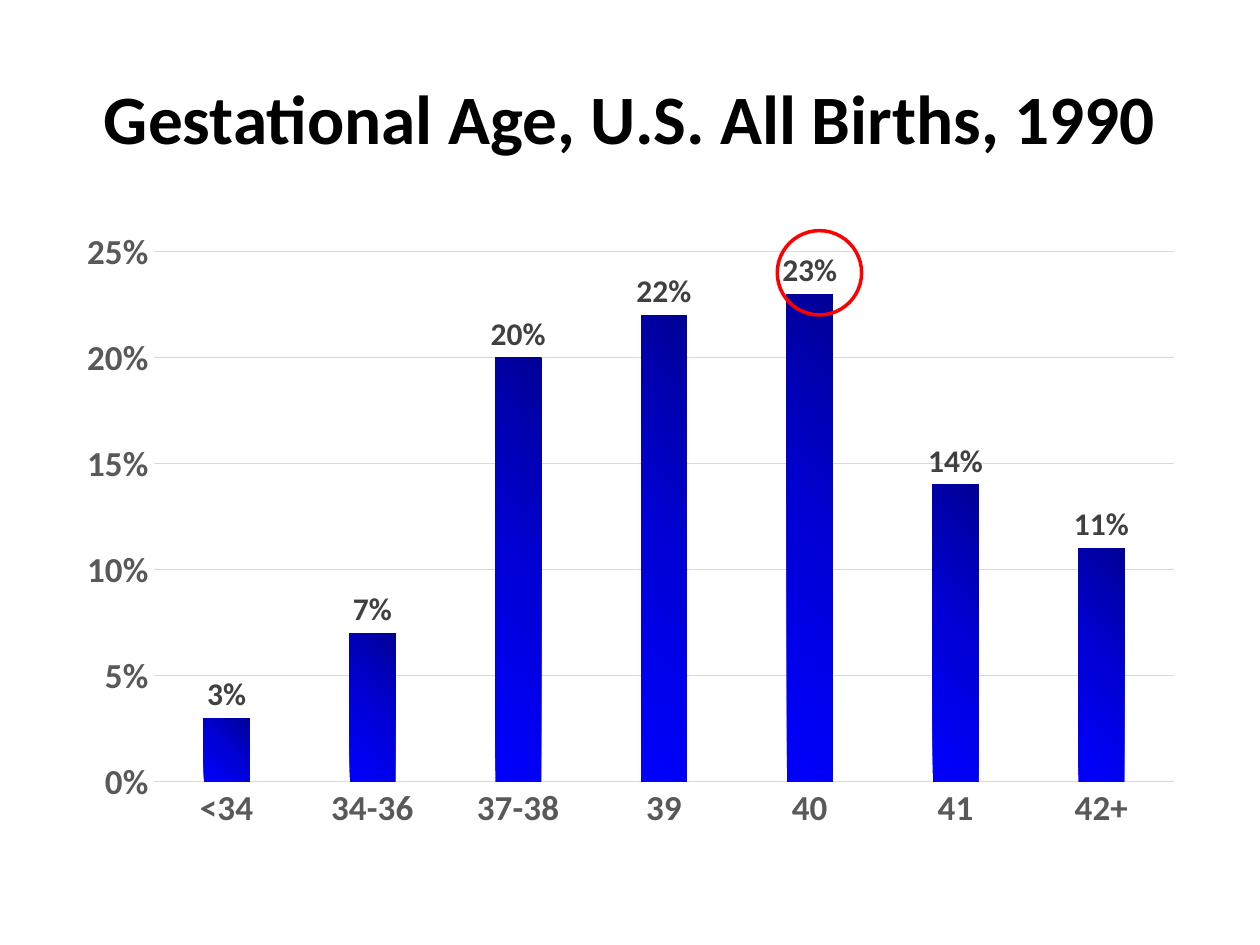
from pptx import Presentation
from pptx.chart.data import CategoryChartData
from pptx.dml.color import RGBColor
from pptx.enum.chart import XL_CHART_TYPE, XL_LABEL_POSITION, XL_TICK_MARK
from pptx.enum.shapes import MSO_SHAPE
from pptx.enum.text import MSO_ANCHOR, PP_ALIGN
from pptx.oxml import parse_xml
from pptx.oxml.ns import nsdecls, qn
from pptx.util import Cm, Pt

COLORS = {
    "title": "000000",
    "axis": "595959",
    "label": "404040",
    "grid": "D9D9D9",
    "circle": "FF0000",
}
BAR_GRADIENT = {0: "000097", 50: "0000D7", 100: "0000FF"}
BIRTH_SHARES = {
    "<34": 0.03, "34-36": 0.07, "37-38": 0.2, "39": 0.22,
    "40": 0.23, "41": 0.14, "42+": 0.11,
}


def format_font(font, size, color, bold=True):
    font.name = "Calibri"
    font.size = Pt(size)
    font.bold = bold
    font.color.rgb = RGBColor.from_string(COLORS[color])


presentation = Presentation()
presentation.slide_width = Cm(25.4)
presentation.slide_height = Cm(19.05)
slide = presentation.slides.add_slide(presentation.slide_layouts[5])

# Title
title = slide.shapes.title
title.left, title.top, title.width, title.height = Cm(1.27), Cm(0.76), Cm(22.86), Cm(3.18)
title.text_frame.vertical_anchor = MSO_ANCHOR.MIDDLE
paragraph = title.text_frame.paragraphs[0]
paragraph.alignment = PP_ALIGN.CENTER
run = paragraph.add_run()
run.text = "Gestational Age, U.S. All Births, 1990"
format_font(run.font, 39.6, "title")

# Column chart
chart_data = CategoryChartData(number_format="0%")
chart_data.categories = list(BIRTH_SHARES)
chart_data.add_series("Series 1", list(BIRTH_SHARES.values()))
chart = slide.shapes.add_chart(
    XL_CHART_TYPE.COLUMN_CLUSTERED, Cm(1.27), Cm(4.45), Cm(22.86), Cm(12.57), chart_data
).chart
chart.has_title = False
chart.has_legend = False
format_font(chart.font, 10, "title", bold=False)

# Axes and gridlines
category_axis, value_axis = chart.category_axis, chart.value_axis
for axis in (category_axis, value_axis):
    axis.major_tick_mark = axis.minor_tick_mark = XL_TICK_MARK.NONE
    format_font(axis.tick_labels.font, 20, "axis")
value_axis.minimum_scale, value_axis.maximum_scale, value_axis.major_unit = 0, 0.25, 0.05
value_axis.tick_labels.number_format = "0%"
value_axis.tick_labels.number_format_is_linked = False
value_axis.format.line.fill.background()
value_axis.has_major_gridlines = True
for line in (category_axis.format.line, value_axis.major_gridlines.format.line):
    line.width = Pt(0.75)
    line.color.rgb = RGBColor.from_string(COLORS["grid"])

# Columns with a radial gradient from the top right corner
plot = chart.plots[0]
plot.gap_width = 219
plot.overlap = -27
plot.vary_by_categories = False
series = plot.series[0]
series.invert_if_negative = False
stops = "".join(
    f'<a:gs pos="{position * 1000}"><a:srgbClr val="{color}"/></a:gs>'
    for position, color in BAR_GRADIENT.items()
)
series.format.fill.background()
bar_properties = series._element.spPr
bar_properties.replace(bar_properties.find(qn("a:noFill")), parse_xml(
    f'<a:gradFill {nsdecls("a")} rotWithShape="1"><a:gsLst>{stops}</a:gsLst>'
    '<a:path path="circle"><a:fillToRect l="100000" b="100000"/></a:path></a:gradFill>'
))

# Data labels
plot.has_data_labels = True
labels = plot.data_labels
labels.show_value = True
labels.number_format = "0%"
labels.number_format_is_linked = False
labels.position = XL_LABEL_POSITION.OUTSIDE_END
format_font(labels.font, 18, "label")

# Plot area position as fractions of the chart
plot_area = chart._chartSpace.chart.plotArea
for layout in plot_area.findall(qn("c:layout")):
    plot_area.remove(layout)
fractions = "".join(
    f'<c:{name} val="{value}"/>'
    for name, value in {"x": 0.08, "y": 0.05, "w": 0.9, "h": 0.85}.items()
)
plot_area.insert(0, parse_xml(
    f'<c:layout {nsdecls("c")}><c:manualLayout><c:layoutTarget val="inner"/>'
    f'<c:xMode val="edge"/><c:yMode val="edge"/>{fractions}</c:manualLayout></c:layout>'
))

# Circle around the peak
circle = slide.shapes.add_shape(MSO_SHAPE.OVAL, Cm(15.67), Cm(4.65), Cm(1.7), Cm(1.7))
circle.shadow.inherit = False
circle.fill.background()
circle.line.color.rgb = RGBColor.from_string(COLORS["circle"])
circle.line.width = Pt(2)

presentation.save("out.pptx")
